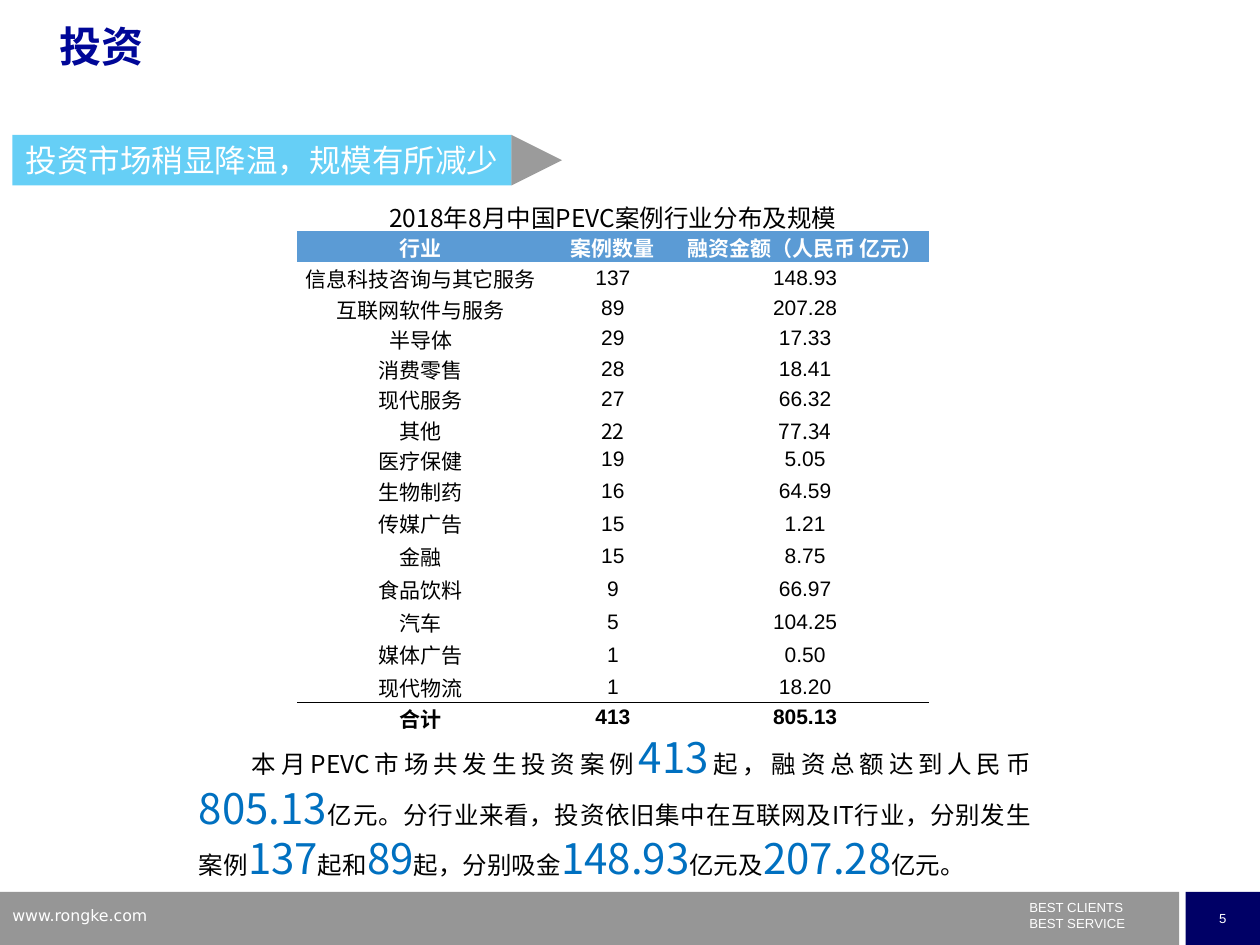
from lxml.etree import SubElement
from pptx import Presentation
from pptx.dml.color import RGBColor
from pptx.enum.shapes import MSO_SHAPE
from pptx.enum.text import MSO_ANCHOR, PP_ALIGN
from pptx.oxml.ns import qn
from pptx.util import Cm, Pt

THEME = {
    "cjk": "Noto Sans CJK SC", "caption": "Noto Sans CJK JP",
    "latin": "Arial", "web": "DejaVu Sans",
    "white": RGBColor(0xFF, 0xFF, 0xFF), "black": RGBColor(0, 0, 0),
    "title": RGBColor(0x00, 0x07, 0x98), "figure": RGBColor(0x00, 0x70, 0xC0),
    "header": RGBColor(0x5B, 0x9B, 0xD5), "footer": RGBColor(0x96, 0x96, 0x96),
    "page": RGBColor(0x00, 0x00, 0x66), "banner": RGBColor(0x00, 0xB0, 0xF0),
    "arrow": RGBColor(0x59, 0x59, 0x59),
    "title_pt": 24, "banner_pt": 18, "body_pt": 14, "figure_pt": 24,
    "cell_pt": 12, "web_pt": 9, "small_pt": 7.5,
}


def add_run(p, text, size, color="black", font="cjk", bold=False):
    """Append a run whose type size and colour are named in THEME."""
    r = p.add_run()
    r.text = text
    r.font.color.rgb = THEME[color]
    for name, value in {"size": Pt(THEME[size]), "name": THEME[font], "bold": bold}.items():
        setattr(r.font, name, value)
    east_asian = THEME["caption" if font == "caption" else "cjk"]
    SubElement(r.font._element, qn("a:ea"), typeface=east_asian)


def add_block(shapes, kind, box, color, alpha=None):
    """Add a borderless filled shape; alpha is its opacity in percent."""
    s = shapes.add_shape(kind, *map(Cm, box))
    s.shadow.inherit = False
    s.fill.solid()
    s.fill.fore_color.rgb = THEME[color]
    s.line.fill.background()
    if alpha:
        srgb = s.fill._xPr.find(qn("a:solidFill")).find(qn("a:srgbClr"))
        SubElement(srgb, qn("a:alpha"), val=str(alpha * 1000))
    return s


prs = Presentation()
prs.slide_width, prs.slide_height = Cm(25.4), Cm(19.05)
slide = prs.slides.add_slide(prs.slide_layouts[5])
shapes = slide.shapes

# Title
title = shapes.title
for name, value in {"left": 0.94, "top": 0.41, "width": 22.86, "height": 1.78}.items():
    setattr(title, name, Cm(value))
title.text_frame.vertical_anchor = MSO_ANCHOR.TOP
p = title.text_frame.paragraphs[0]
p.alignment, p.line_spacing = PP_ALIGN.LEFT, 0.9
add_run(p, "投资", "title_pt", "title", "latin", True)

# Footer
add_block(shapes, MSO_SHAPE.RECTANGLE, (0, 17.98, 23.77, 1.07), "footer")
page = add_block(shapes, MSO_SHAPE.RECTANGLE, (23.9, 17.98, 1.5, 1.07), "page")
page.text_frame.vertical_anchor = MSO_ANCHOR.MIDDLE
p = page.text_frame.paragraphs[0]
p.alignment = PP_ALIGN.CENTER
add_run(p, "5", "small_pt", "white", "latin")

tf = shapes.add_textbox(Cm(20.5), Cm(18.14), Cm(3.81), Cm(0.74)).text_frame
tf.word_wrap, tf.margin_top = True, 0
add_run(tf.paragraphs[0], "BEST CLIENTS", "small_pt", "white", "latin")
add_run(tf.add_paragraph(), "BEST SERVICE", "small_pt", "white", "latin")

tf = shapes.add_textbox(0, Cm(18.14), Cm(6.1), Cm(0.66)).text_frame
tf.word_wrap = True
add_run(tf.paragraphs[0], "www.rongke.com", "web_pt", "white", "web")

# Headline banner
banner = shapes.add_group_shape().shapes
label = add_block(banner, MSO_SHAPE.RECTANGLE, (0.25, 2.72, 10.06, 1.02), "banner", 60)
tip = add_block(banner, MSO_SHAPE.ISOSCELES_TRIANGLE, (10.31, 2.72, 1.02, 1.02), "arrow", 60)
tip.rotation = 90
label.text_frame.vertical_anchor = MSO_ANCHOR.MIDDLE
p = label.text_frame.paragraphs[0]
p.alignment = PP_ALIGN.CENTER
add_run(p, "投资市场稍显降温，规模有所减少", "banner_pt", "white")

# Industry table
ROWS = [
    ("2018年8月中国PEVC案例行业分布及规模", "", ""),
    ("行业", "案例数量", "融资金额（人民币 亿元）"),
    ("信息科技咨询与其它服务", "137", "148.93"),
    ("互联网软件与服务", "89", "207.28"),
    ("半导体", "29", "17.33"),
    ("消费零售", "28", "18.41"),
    ("现代服务", "27", "66.32"),
    ("其他", "22", "77.34"),
    ("医疗保健", "19", "5.05"),
    ("生物制药", "16", "64.59"),
    ("传媒广告", "15", "1.21"),
    ("金融", "15", "8.75"),
    ("食品饮料", "9", "66.97"),
    ("汽车", "5", "104.25"),
    ("媒体广告", "1", "0.50"),
    ("现代物流", "1", "18.20"),
    ("合计", "413", "805.13"),
]
HEIGHTS = [0.66, 0.64] + [0.61] * 7 + [0.66] * 6 + [0.64, 0.56]
CELL = {"margin_left": Cm(0.03), "margin_top": Cm(0.02), "margin_right": Cm(0.03),
        "margin_bottom": 0, "vertical_anchor": MSO_ANCHOR.MIDDLE}
NO_STYLE = "{2D5ABB26-0587-4C30-8999-92F81FD0307C}"
total = len(ROWS) - 1

table = shapes.add_table(len(ROWS), 3, Cm(5.99), Cm(3.99), Cm(12.73), Cm(sum(HEIGHTS))).table
table.first_row = table.horz_banding = False
table._tbl.tblPr.find(qn("a:tableStyleId")).text = NO_STYLE
for column, width in zip(table.columns, (4.98, 2.77, 4.98)):
    column.width = Cm(width)
for row, height in zip(table.rows, HEIGHTS):
    row.height = Cm(height)
table.cell(0, 0).merge(table.cell(0, 2))

for i, values in enumerate(ROWS):
    for j, text in enumerate(values):
        cell = table.cell(i, j)
        for name, value in CELL.items():
            setattr(cell, name, value)
        if i >= total - 1:
            edge = "a:lnB" if i == total - 1 else "a:lnT"
            ln = SubElement(cell._tc.get_or_add_tcPr(), qn(edge), w=str(Pt(1)))
            SubElement(SubElement(ln, qn("a:solidFill")), qn("a:srgbClr"), val="000000")
        if i == 0:
            cell.fill.background()
        else:
            cell.fill.solid()
            cell.fill.fore_color.rgb = THEME["header" if i == 1 else "white"]
        if not text:
            continue
        p = cell.text_frame.paragraphs[0]
        p.alignment = PP_ALIGN.CENTER
        if i == 0:
            add_run(p, text, "body_pt", font="caption")
        else:
            font = "latin" if i > 1 and j > 0 and values[0] != "其他" else "cjk"
            add_run(p, text, "cell_pt", "white" if i == 1 else "black", font, i in (1, total))

# Summary: every second part is a highlighted figure
SUMMARY = [
    "本月PEVC市场共发生投资案例", "413", "起，融资总额达到人民币", "805.13",
    "亿元。分行业来看，投资依旧集中在互联网及IT行业，分别发生案例", "137",
    "起和", "89", "起，分别吸金", "148.93", "亿元及", "207.28", "亿元。",
]
tf = shapes.add_textbox(Cm(3.76), Cm(14.61), Cm(17.22), Cm(3.33)).text_frame
tf.word_wrap, tf.margin_right = True, Cm(0.2)
p = tf.paragraphs[0]
p.alignment, p.line_spacing = PP_ALIGN.JUSTIFY, Pt(29)
# The closing full stop hangs past the right edge, so the text keeps to three lines
for name, value in {"indent": str(Cm(1.07)), "hangingPunct": "1"}.items():
    p._p.get_or_add_pPr().set(name, value)
for i, text in enumerate(SUMMARY):
    if i % 2:
        add_run(p, text, "figure_pt", "figure")
    else:
        add_run(p, text, "body_pt")

prs.save("out.pptx")
